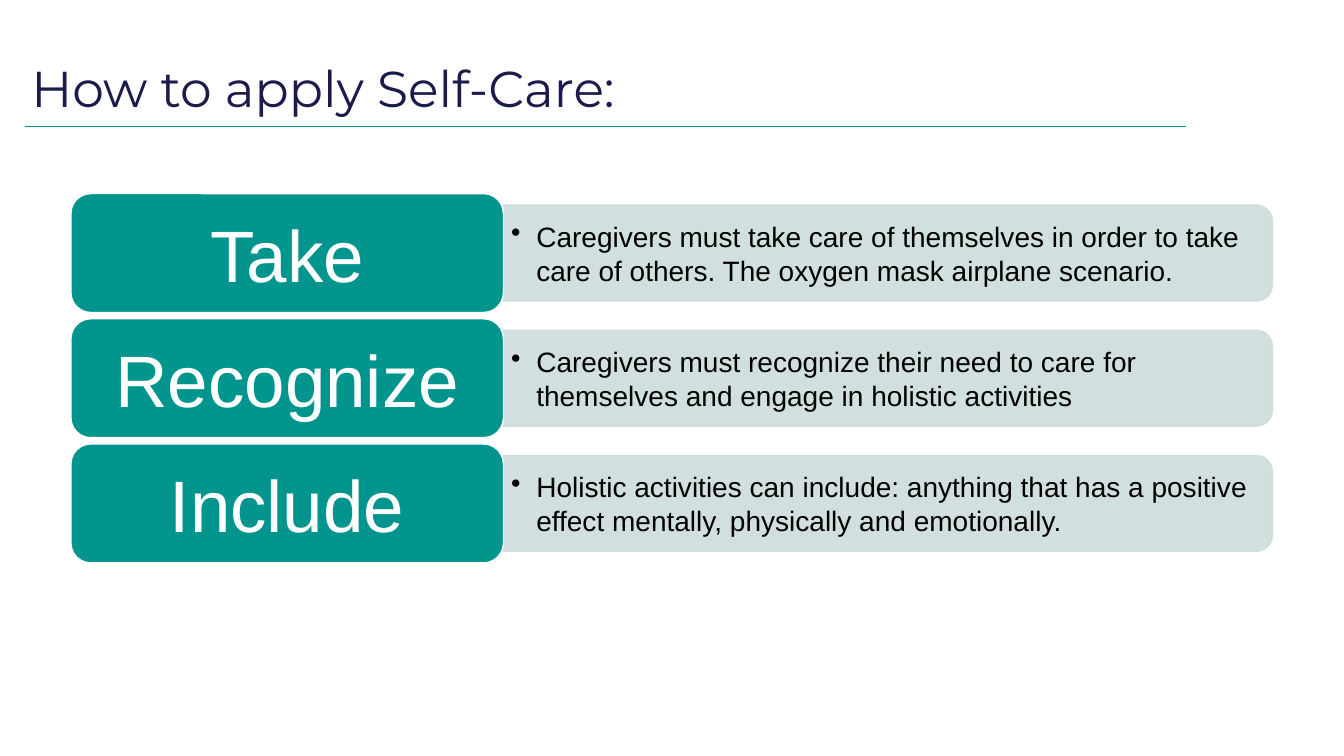
from dataclasses import dataclass

import pptx
import pptx.dml.color
import pptx.enum.shapes
import pptx.enum.text
import pptx.oxml
import pptx.oxml.ns
import pptx.util
from pptx.shapes.autoshape import Shape
from pptx.slide import Slide
from pptx.text.text import TextFrame

RGBColor = pptx.dml.color.RGBColor
TEAL = RGBColor(0x02, 0x95, 0x8D)
PALE = RGBColor(0xCC, 0xDD, 0xDB)
NAVY = RGBColor(0x1B, 0x1C, 0x4B)
WHITE = RGBColor(0xFF, 0xFF, 0xFF)
BLACK = RGBColor(0x00, 0x00, 0x00)

SLIDE_WIDTH = pptx.util.Inches(13.33)
SLIDE_HEIGHT = pptx.util.Inches(7.5)

FIRST_ROW_CENTER = 33.47
ROW_PITCH = 16.56
LABEL_LEFT, LABEL_WIDTH, LABEL_HEIGHT = 5.28, 32.18, 15.73
BAND_LEFT, BAND_WIDTH, BAND_HEIGHT = 37.43, 57.24, 12.67
DETAIL_WIDTH, DETAIL_HEIGHT = 56.86, 11.33


@dataclass(frozen=True)
class Step:
    label: str
    detail: str


@dataclass(frozen=True)
class Box:
    left: int
    top: int
    width: int
    height: int

    def turned(self) -> "Box":
        shift = (self.width - self.height) // 2
        return Box(self.left + shift, self.top - shift, self.height, self.width)

    def bounds(self) -> tuple[int, int, int, int]:
        return self.left, self.top, self.width, self.height


STEPS = [
    Step("Take", "Caregivers must take care of themselves in order to take care of others. "
         "The oxygen mask airplane scenario."),
    Step("Recognize", "Caregivers must recognize their need to care for themselves "
         "and engage in holistic activities"),
    Step("Include", "Holistic activities can include: anything that has a positive effect "
         "mentally, physically and emotionally."),
]


def across(percent: float) -> int:
    return round(SLIDE_WIDTH * percent / 100)


def down(percent: float) -> int:
    return round(SLIDE_HEIGHT * percent / 100)


def row_box(row: int, left: float, width: float, height: float) -> Box:
    top = FIRST_ROW_CENTER + row * ROW_PITCH - height / 2
    return Box(across(left), down(top), across(width), down(height))


def write_text(frame: TextFrame, text: str, *, size: float, color: RGBColor,
               font: str = "Arial", align=pptx.enum.text.PP_ALIGN.LEFT,
               anchor=pptx.enum.text.MSO_ANCHOR.MIDDLE, margins=(0.1, 0.05),
               line_spacing: float = 1.0, bullet: bool = False) -> None:
    frame.word_wrap = True
    frame.auto_size = pptx.enum.text.MSO_AUTO_SIZE.NONE
    frame.vertical_anchor = anchor
    frame.margin_left = frame.margin_right = pptx.util.Inches(margins[0])
    frame.margin_top = frame.margin_bottom = pptx.util.Inches(margins[1])
    paragraph = frame.paragraphs[0]
    if bullet:
        properties = paragraph._p.get_or_add_pPr()
        indent = pptx.util.Inches(0.25)
        properties.set("marL", str(indent))
        properties.set("indent", str(-indent))
        mark = pptx.oxml.parse_xml(f'<a:buChar {pptx.oxml.ns.nsdecls("a")} char="•"/>')
        properties.append(mark)
    paragraph.alignment = align
    paragraph.line_spacing = line_spacing
    run = paragraph.add_run()
    run.text = text
    run.font.name = font
    run.font.size = pptx.util.Pt(size)
    run.font.color.rgb = color


def add_panel(slide: Slide, kind, box: Box, fill: RGBColor, line: RGBColor) -> Shape:
    shape = slide.shapes.add_shape(kind, *box.bounds())
    shape.shadow.inherit = False
    shape.fill.solid()
    shape.fill.fore_color.rgb = fill
    shape.line.color.rgb = line
    shape.line.width = pptx.util.Pt(1)
    return shape


def add_step(slide: Slide, row: int, step: Step) -> None:
    kinds = pptx.enum.shapes.MSO_SHAPE
    band_box = row_box(row, BAND_LEFT, BAND_WIDTH, BAND_HEIGHT)
    band = add_panel(slide, kinds.ROUND_2_SAME_RECTANGLE, band_box.turned(), PALE, PALE)
    band.rotation = 90
    for color in band._element.spPr.iter(pptx.oxml.ns.qn("a:srgbClr")):
        color.append(pptx.oxml.parse_xml(
            f'<a:alpha {pptx.oxml.ns.nsdecls("a")} val="90000"/>'))

    detail_box = row_box(row, BAND_LEFT, DETAIL_WIDTH, DETAIL_HEIGHT)
    detail = slide.shapes.add_textbox(*detail_box.bounds())
    write_text(detail.text_frame, step.detail, size=20, color=BLACK,
               margins=(0.08, 0.04), bullet=True)

    label_box = row_box(row, LABEL_LEFT, LABEL_WIDTH, LABEL_HEIGHT)
    label = add_panel(slide, kinds.ROUNDED_RECTANGLE, label_box, TEAL, WHITE)
    write_text(label.text_frame, step.label, size=52, color=WHITE,
               align=pptx.enum.text.PP_ALIGN.CENTER, margins=(0.22, 0.11))


def add_heading(slide: Slide) -> None:
    rule = slide.shapes.add_connector(
        pptx.enum.shapes.MSO_CONNECTOR.STRAIGHT,
        across(1.88), down(16.67), across(88.22), down(16.67))
    rule.line.color.rgb = TEAL
    rule.line.width = pptx.util.Pt(0.5)
    rule._element.spPr.append(
        pptx.oxml.parse_xml(f'<a:effectLst {pptx.oxml.ns.nsdecls("a")}/>'))

    title = slide.shapes.title
    title.left, title.top = across(1.58), down(1.6)
    title.width, title.height = across(96.62), down(14.67)
    write_text(title.text_frame, "How to apply Self-Care:", size=36, color=NAVY,
               font="Montserrat", anchor=pptx.enum.text.MSO_ANCHOR.BOTTOM,
               line_spacing=0.9)


def main() -> None:
    presentation = pptx.Presentation()
    presentation.slide_width = SLIDE_WIDTH
    presentation.slide_height = SLIDE_HEIGHT
    slide = presentation.slides.add_slide(presentation.slide_layouts[5])
    add_heading(slide)
    for row, step in enumerate(STEPS):
        add_step(slide, row, step)
    presentation.save("out.pptx")


if __name__ == "__main__":
    main()
